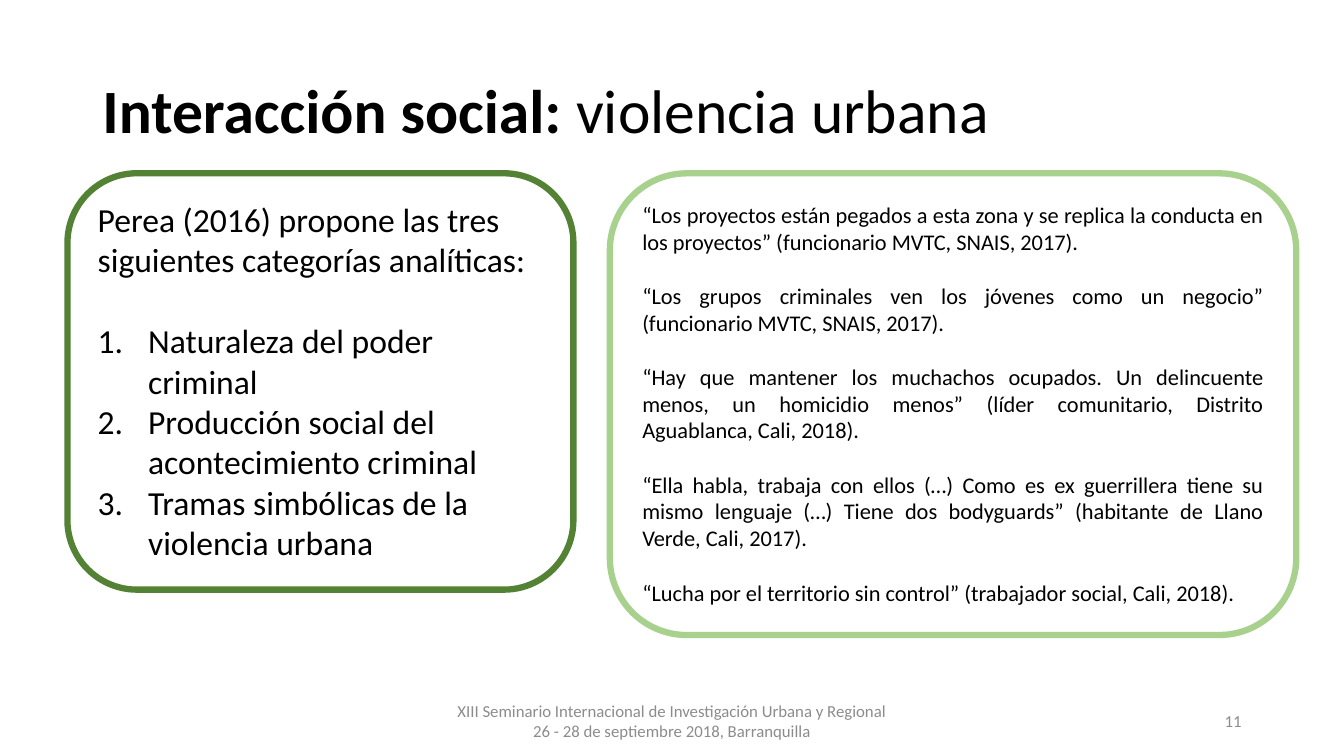
import pptx
import pptx.util
import pptx.dml.color
import pptx.enum.shapes
import pptx.enum.text
import pptx.oxml
import pptx.oxml.ns

Pt = pptx.util.Pt
ALIGN = pptx.enum.text.PP_ALIGN
ANCHOR = pptx.enum.text.MSO_ANCHOR
AUTO = pptx.enum.text.MSO_AUTO_SIZE


def color(value):
    return pptx.dml.color.RGBColor.from_string(value)


class Deck:
    """Hold the presentation, its style and the current slide."""

    font = "Calibri"
    ink = "000000"
    muted = "8C8C8C"

    def __init__(self, width, height):
        self.prs = pptx.Presentation()
        self.prs.slide_width, self.prs.slide_height = Pt(width), Pt(height)
        self.s = self.prs.slides.add_slide(self.prs.slide_layouts[5])

    def apply(self, target, values):
        for name, value in values.items():
            setattr(target, name, value)

    def frame(self, sp, anchor, auto_size=AUTO.NONE):
        tf = sp.text_frame
        self.apply(tf, {"word_wrap": True, "auto_size": auto_size,
                        "vertical_anchor": anchor})
        return tf

    def run(self, p, text, size, ink=None, bold=False):
        r = p.add_run()
        r.text = text
        self.apply(r.font, {"name": self.font, "size": Pt(size), "bold": bold})
        r.font.color.rgb = color(ink or self.ink)

    def title(self, box, lead, rest):
        sp = self.s.shapes.title
        self.apply(sp, dict(zip(("left", "top", "width", "height"), map(Pt, box))))
        p = self.frame(sp, ANCHOR.MIDDLE).paragraphs[0]
        self.apply(p, {"alignment": ALIGN.LEFT, "line_spacing": 0.9})
        self.run(p, lead, 44, bold=True)
        self.run(p, rest, 44)

    def note(self, box, text, align):
        sp = self.s.shapes.add_textbox(*map(Pt, box))
        p = self.frame(sp, ANCHOR.MIDDLE).paragraphs[0]
        p.alignment = align
        self.run(p, text, 12, self.muted)

    def panel(self, box, line):
        kind = pptx.enum.shapes.MSO_SHAPE.ROUNDED_RECTANGLE
        sp = self.s.shapes.add_shape(kind, *map(Pt, box))
        sp.shadow.inherit = False
        sp.fill.background()
        sp.line.color.rgb = color(line)
        sp.line.width = Pt(4.5)
        return self.frame(sp, ANCHOR.TOP, AUTO.SHAPE_TO_FIT_TEXT)

    def paragraphs(self, tf, items, size, align, gap=0, numbered=False):
        for text in items:
            p = tf.paragraphs[0] if not tf.text else tf.add_paragraph()
            self.apply(p, {"alignment": align, "space_after": Pt(gap)})
            if numbered:
                self.number(p, 36)
            self.run(p, text, size)

    def number(self, p, indent):
        pPr = p._p.get_or_add_pPr()
        pPr.set("marL", str(Pt(indent)))
        pPr.set("indent", str(-Pt(indent)))
        ns = pptx.oxml.ns.nsdecls("a")
        pPr.append(pptx.oxml.parse_xml(f'<a:buFont {ns} typeface="+mj-lt"/>'))
        pPr.append(pptx.oxml.parse_xml(f'<a:buAutoNum {ns} type="arabicPeriod"/>'))


INTRO = ["Perea (2016) propone las tres siguientes categorías analíticas:"]
CATEGORIES = [
    "Naturaleza del poder criminal",
    "Producción social del acontecimiento criminal",
    "Tramas simbólicas de la violencia urbana",
]
QUOTES = [
    "“Los proyectos están pegados a esta zona y se replica la conducta en los "
    "proyectos” (funcionario MVTC, SNAIS, 2017).",
    "“Los grupos criminales ven los jóvenes como un negocio” "
    "(funcionario MVTC, SNAIS, 2017).",
    "“Hay que mantener los muchachos ocupados. Un delincuente menos, un homicidio "
    "menos” (líder comunitario, Distrito Aguablanca, Cali, 2018).",
    "“Ella habla, trabaja con ellos (…) Como es ex guerrillera tiene su mismo "
    "lenguaje (…) Tiene dos bodyguards” (habitante de Llano Verde, Cali, 2017).",
    "“Lucha por el territorio sin control” (trabajador social, Cali, 2018).",
]


def main():
    deck = Deck(960, 540)
    deck.title((66, 28.8, 828, 104.4), "Interacción social: ", "violencia urbana")
    deck.note((318, 500.4, 324, 28.8),
              "XIII Seminario Internacional de Investigación Urbana y Regional "
              "26 - 28 de septiembre 2018, Barranquilla", ALIGN.CENTER)
    deck.note((678, 500.4, 216, 28.8), "11", ALIGN.RIGHT)

    tf = deck.panel((48.2, 123.8, 361.4, 297.4), "548235")
    deck.paragraphs(tf, INTRO, 24, ALIGN.LEFT, gap=29.3)
    deck.paragraphs(tf, CATEGORIES, 24, ALIGN.LEFT, numbered=True)

    tf = deck.panel((435.6, 123.8, 490.3, 329.8), "A9D18E")
    deck.paragraphs(tf, QUOTES[:-1], 16, ALIGN.JUSTIFY, gap=19.5)
    deck.paragraphs(tf, QUOTES[-1:], 16, ALIGN.JUSTIFY)
    deck.prs.save("out.pptx")


if __name__ == "__main__":
    main()
